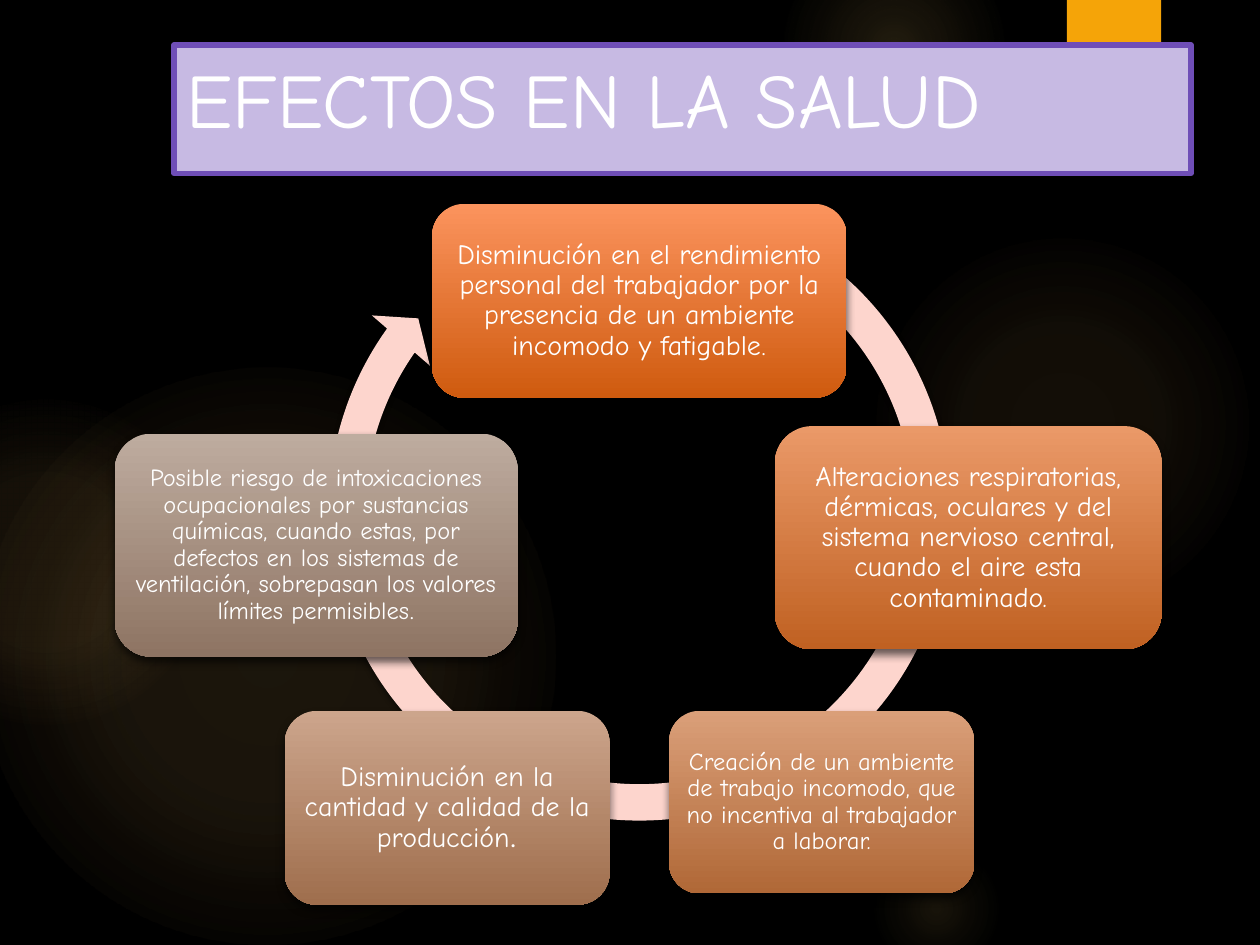
import lxml.etree
import pptx
import pptx.dml.color
import pptx.enum.shapes
import pptx.enum.text
import pptx.oxml.ns
import pptx.util

Cm = pptx.util.Cm
SHAPES = pptx.enum.shapes.MSO_SHAPE
ANCHOR = pptx.enum.text.MSO_ANCHOR
ALIGN = pptx.enum.text.PP_ALIGN
FONT = "Comic Neue"
SMALL_FONT = "League Spartan"

GLOWS = [
    (17.5, 4.65, 7.82, [(0, 7), (36, 6), (69, 0)]),
    (15.8, -1.27, 4.45, [(0, 14), (36, 7), (73, 0)]),
    (17.5, 16.94, 2.74, [(0, 10), (31, 5), (66, 0)]),
    (-0.43, 7.42, 11.63, [(0, 11), (36, 10), (75, 0)]),
    (-2.34, 8.05, 6.55, [(0, 8), (36, 8), (72, 0)]),
]

EFFECTS = [
    ((8.71, 4.11, 8.36, 3.91), "FB935D", "CF5B0F", 16, 10,
     "Disminución en el rendimiento personal del trabajador por la presencia "
     "de un ambiente incomodo y fatigable"),
    ((15.62, 8.59, 7.8, 4.5), "EA9968", "C06122", 16, None,
     "Alteraciones respiratorias, dérmicas, oculares y del sistema nervioso "
     "central, cuando el aire esta contaminado."),
    ((13.49, 14.33, 6.15, 3.68), "DA9F79", "B06837", 14, None,
     "Creación de un ambiente de trabajo incomodo, que no incentiva al "
     "trabajador a laborar."),
    ((5.74, 14.33, 6.55, 3.91), "CCA58C", "9F6E4D", 16, 14,
     "Disminución en la cantidad y calidad de la producción"),
    ((2.31, 8.74, 8.13, 4.5), "BEAC9F", "8E7463", 14, 10,
     "Posible riesgo de intoxicaciones ocupacionales por sustancias químicas, "
     "cuando estas, por defectos en los sistemas de ventilación, sobrepasan "
     "los valores límites permisibles"),
]


def color(value):
    return pptx.dml.color.RGBColor.from_string(value)


def add_child(parent, tag, **attributes):
    child = lxml.etree.SubElement(parent, pptx.oxml.ns.qn(tag))
    for name, value in attributes.items():
        child.set(name, str(value))
    return child


def add_color(parent, value, opacity):
    node = add_child(parent, "a:srgbClr", val=value)
    if opacity < 100:
        add_child(node, "a:alpha", val=opacity * 1000)


def set_gradient(shape, stops, radial=False):
    properties = shape.element.spPr
    gradient = add_child(properties, "a:gradFill", rotWithShape=1)
    stop_list = add_child(gradient, "a:gsLst")
    for position, value, opacity in stops:
        stop = add_child(stop_list, "a:gs", pos=position * 1000)
        add_color(stop, value, opacity)
    if radial:
        direction = add_child(gradient, "a:path", path="circle")
        add_child(direction, "a:fillToRect", l=50000, t=50000, r=50000, b=50000)
    else:
        add_child(gradient, "a:lin", ang=90 * 60000, scaled=0)
    properties.find(pptx.oxml.ns.qn("a:prstGeom")).addnext(gradient)


def set_shadow(shape, opacity, blur, distance):
    effects = shape.element.spPr.find(pptx.oxml.ns.qn("a:effectLst"))
    shadow = add_child(effects, "a:outerShdw", blurRad=pptx.util.Pt(blur),
                       dist=pptx.util.Pt(distance), dir=90 * 60000,
                       algn="ctr", rotWithShape=0)
    add_color(shadow, "000000", opacity)


def add_shape(slide, kind, place, fill=None, line=None, line_width=0):
    shape = slide.shapes.add_shape(kind, *(Cm(length) for length in place))
    shape.shadow.inherit = False
    if fill:
        shape.fill.solid()
        shape.fill.fore_color.rgb = color(fill)
    if line:
        shape.line.color.rgb = color(line)
        shape.line.width = pptx.util.Pt(line_width)
    else:
        shape.line.fill.background()
    return shape


def add_span(para, text, size, font):
    span = para.add_run()
    span.text = text
    span.font.size = pptx.util.Pt(size)
    span.font.name = font
    span.font.color.rgb = color("FFFFFF")


def write_text(shape, text, size=16, align=ALIGN.CENTER, anchor=ANCHOR.MIDDLE,
               spacing=0.9, margins=(0.17, 0.17), stop_size=None):
    frame = shape.text_frame
    frame.word_wrap = True
    frame.vertical_anchor = anchor
    frame.margin_left = frame.margin_right = Cm(margins[0])
    frame.margin_top = frame.margin_bottom = Cm(margins[1])
    para = frame.paragraphs[0]
    para.alignment = align
    para.line_spacing = spacing
    add_span(para, text, size, FONT)
    if stop_size:
        add_span(para, ".", stop_size, SMALL_FONT)


def add_glow(slide, left, top, diameter, stops):
    glow = add_shape(slide, SHAPES.OVAL, (left, top, diameter, diameter))
    set_gradient(glow, [(position, "FAC96A", opacity)
                        for position, opacity in stops], radial=True)


def add_title(slide):
    tab = add_shape(slide, SHAPES.RECTANGLE, (21.51, 0, 1.9, 3.05), "F5A408")
    set_shadow(tab, 45, 3, 2)
    title = add_shape(slide, SHAPES.RECTANGLE, (3.51, 0.91, 20.5, 2.59),
                      "C7BAE3", "6F4EB7", 3)
    write_text(title, "EFECTOS EN LA SALUD", size=44, align=ALIGN.LEFT,
               anchor=ANCHOR.TOP, spacing=1.0, margins=(0.25, 0.13))


def add_cycle_arrow(slide):
    arrow = add_shape(slide, SHAPES.CIRCULAR_ARROW,
                      (6.22, 3.61, 13.34, 13.34), "FDD5CD")
    for index, value in enumerate((0.055, 3.307, 129.23, 179.298, 0.058)):
        arrow.adjustments[index] = value
    set_shadow(arrow, 45, 3, 2)


def add_effect(slide, place, top_color, bottom_color, size, stop_size, text):
    box = add_shape(slide, SHAPES.ROUNDED_RECTANGLE, place)
    set_gradient(box, [(0, top_color, 100), (100, bottom_color, 100)])
    set_shadow(box, 60, 5, 3)
    write_text(box, text, size=size, stop_size=stop_size)


def main():
    deck = pptx.Presentation()
    deck.slide_width, deck.slide_height = Cm(25.4), Cm(19.05)
    page = deck.slides.add_slide(deck.slide_layouts[6])
    page.background.fill.solid()
    page.background.fill.fore_color.rgb = color("000000")
    for glow in GLOWS:
        add_glow(page, *glow)
    add_title(page)
    add_cycle_arrow(page)
    for effect in EFFECTS:
        add_effect(page, *effect)
    deck.save("out.pptx")


if __name__ == "__main__":
    main()
